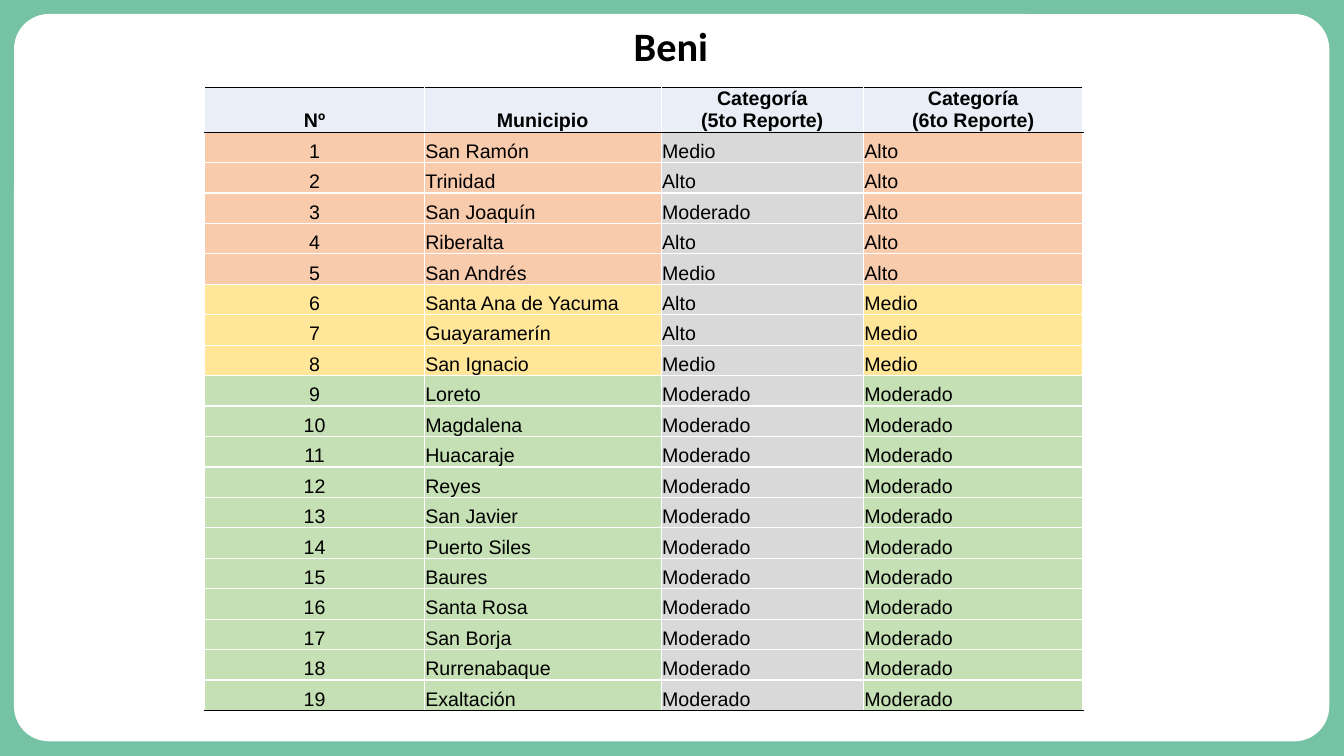
from dataclasses import dataclass

from lxml import etree
from pptx import Presentation
from pptx.dml.color import RGBColor
from pptx.enum import shapes, text
from pptx.oxml import ns
from pptx.util import Pt


@dataclass(frozen=True)
class Theme:
    background: str = "76C2A5"
    white: str = "FFFFFF"
    black: str = "000000"
    header: str = "EAEFF7"
    previous: str = "D9D9D9"
    alto: str = "F8CBAD"
    medio: str = "FFE699"
    moderado: str = "C5E0B4"
    title_font: str = "Calibri"
    table_font: str = "Arial"
    title_size: float = 28.8
    table_size: float = 14


THEME = Theme()
LEVEL_FILLS = {"Alto": THEME.alto, "Medio": THEME.medio, "Moderado": THEME.moderado}
HEADERS = ["Nº", "Municipio", "Categoría\n(5to Reporte)", "Categoría\n(6to Reporte)"]
MUNICIPALITIES = [
    ("San Ramón", "Medio", "Alto"),
    ("Trinidad", "Alto", "Alto"),
    ("San Joaquín", "Moderado", "Alto"),
    ("Riberalta", "Alto", "Alto"),
    ("San Andrés", "Medio", "Alto"),
    ("Santa Ana de Yacuma", "Alto", "Medio"),
    ("Guayaramerín", "Alto", "Medio"),
    ("San Ignacio", "Medio", "Medio"),
    ("Loreto", "Moderado", "Moderado"),
    ("Magdalena", "Moderado", "Moderado"),
    ("Huacaraje", "Moderado", "Moderado"),
    ("Reyes", "Moderado", "Moderado"),
    ("San Javier", "Moderado", "Moderado"),
    ("Puerto Siles", "Moderado", "Moderado"),
    ("Baures", "Moderado", "Moderado"),
    ("Santa Rosa", "Moderado", "Moderado"),
    ("San Borja", "Moderado", "Moderado"),
    ("Rurrenabaque", "Moderado", "Moderado"),
    ("Exaltación", "Moderado", "Moderado"),
]
COLUMN_WIDTHS = [156.8, 169.2, 144.5, 156.8]
HEADER_HEIGHT = 32
ROW_HEIGHT = 21.75


def set_fill(fill, color):
    fill.solid()
    fill.fore_color.rgb = RGBColor.from_string(color)


def add_run(p, words, font, size, bold):
    r = p.add_run()
    r.text = words
    r.font.name = font
    r.font.size = Pt(size)
    r.font.bold = bold
    r.font.color.rgb = RGBColor.from_string(THEME.black)


def add_panel(s):
    sp = s.shapes.add_shape(
        shapes.MSO_SHAPE.ROUNDED_RECTANGLE, Pt(10), Pt(10), Pt(939.5), Pt(519.5)
    )
    sp.adjustments[0] = 0.048
    sp.shadow.inherit = False
    set_fill(sp.fill, THEME.white)
    sp.line.fill.background()
    s.shapes.title.element.addprevious(sp.element)


def format_title(s, words):
    sp = s.shapes.title
    sp.left, sp.top, sp.width, sp.height = Pt(37.5), Pt(15), Pt(883.5), Pt(39.5)
    tf = sp.text_frame
    tf.word_wrap = True
    tf.auto_size = text.MSO_AUTO_SIZE.NONE
    tf.vertical_anchor = text.MSO_ANCHOR.MIDDLE
    p = tf.paragraphs[0]
    p.alignment = text.PP_ALIGN.CENTER
    p.line_spacing = 0.9
    add_run(p, words, THEME.title_font, THEME.title_size, True)


def set_borders(cell, top, bottom):
    tc_pr = cell._tc.get_or_add_tcPr()
    sides = {"lnL": THEME.white, "lnR": THEME.white, "lnT": top, "lnB": bottom}
    for i, (side, color) in enumerate(sides.items()):
        line = etree.Element(ns.qn(f"a:{side}"), w=str(Pt(1)))
        solid = etree.SubElement(line, ns.qn("a:solidFill"))
        etree.SubElement(solid, ns.qn("a:srgbClr"), val=color)
        tc_pr.insert(i, line)


def fill_cell(cell, words, color, bold, centered):
    inset = Pt(0 if centered else 0.7)
    cell.margin_left = cell.margin_right = cell.margin_top = inset
    cell.margin_bottom = 0
    cell.vertical_anchor = text.MSO_ANCHOR.BOTTOM
    set_fill(cell.fill, color)
    tf = cell.text_frame
    for i, line in enumerate(words.split("\n")):
        p = tf.add_paragraph() if i else tf.paragraphs[0]
        p.alignment = text.PP_ALIGN.CENTER if centered else text.PP_ALIGN.LEFT
        add_run(p, line, THEME.table_font, THEME.table_size, bold)


def add_municipality_table(s):
    rows = [HEADERS] + [(str(n), *row) for n, row in enumerate(MUNICIPALITIES, 1)]
    last = len(rows) - 1
    table = s.shapes.add_table(
        len(rows), len(HEADERS), Pt(146.3), Pt(62.4),
        Pt(sum(COLUMN_WIDTHS)), Pt(HEADER_HEIGHT + last * ROW_HEIGHT),
    ).table
    for column, width in zip(table.columns, COLUMN_WIDTHS):
        column.width = Pt(width)
    for i, values in enumerate(rows):
        is_header = i == 0
        table.rows[i].height = Pt(HEADER_HEIGHT if is_header else ROW_HEIGHT)
        row_fill = THEME.header if is_header else LEVEL_FILLS[values[-1]]
        top = THEME.black if i <= 1 else THEME.white
        bottom = THEME.black if i in (0, last) else THEME.white
        for j, words in enumerate(values):
            cell = table.cell(i, j)
            color = THEME.previous if j == 2 and not is_header else row_fill
            fill_cell(cell, words, color, is_header, is_header or j == 0)
            set_borders(cell, top, bottom)


def main():
    prs = Presentation()
    prs.slide_width, prs.slide_height = Pt(960), Pt(540)
    s = prs.slides.add_slide(prs.slide_layouts[5])
    set_fill(s.background.fill, THEME.background)
    add_panel(s)
    format_title(s, "Beni")
    add_municipality_table(s)
    prs.save("out.pptx")


if __name__ == "__main__":
    main()
